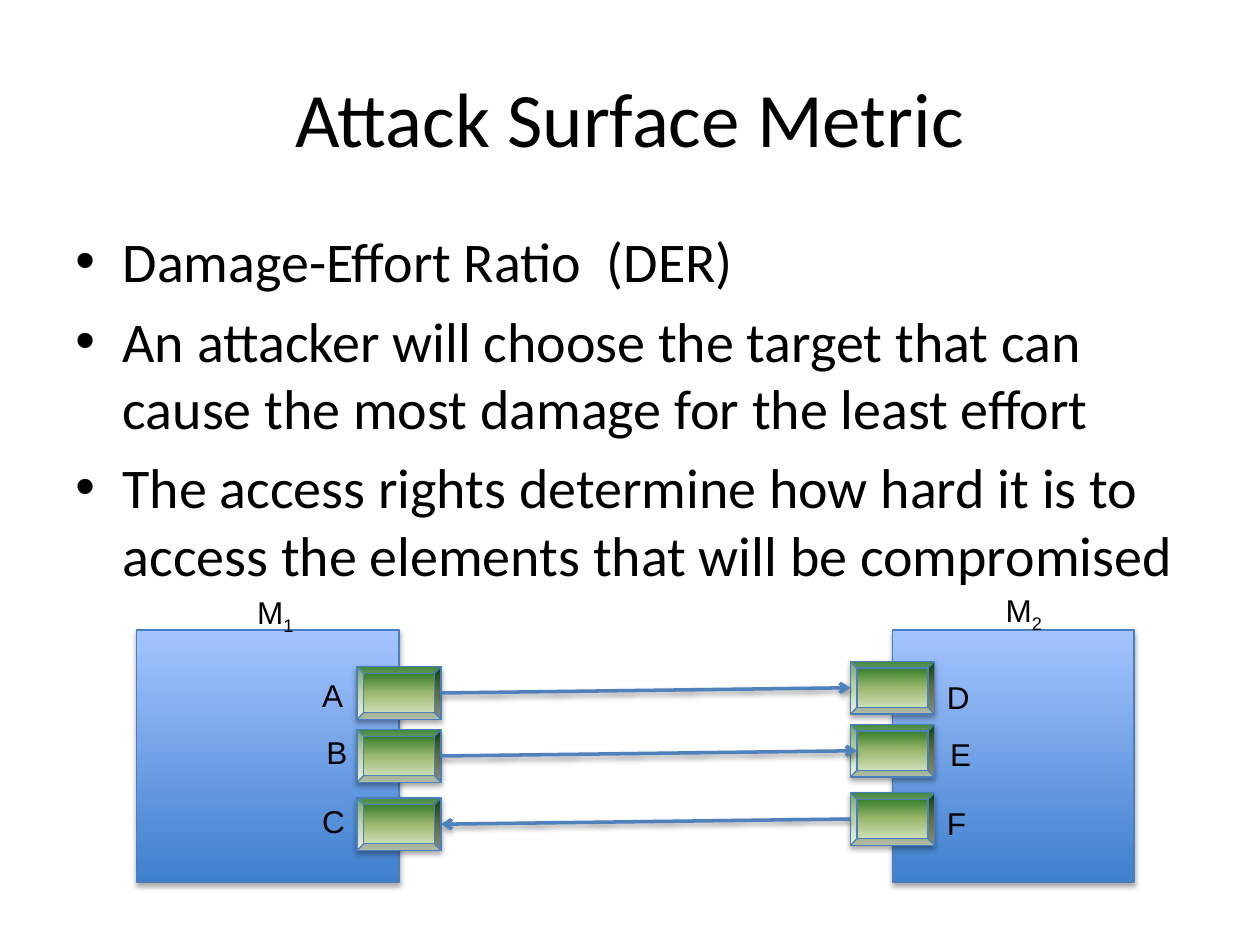
from collections import namedtuple
from dataclasses import dataclass

from lxml.etree import SubElement
from pptx import Presentation
from pptx.dml.color import RGBColor as Color
from pptx.enum.shapes import MSO_CONNECTOR as Line, MSO_SHAPE as Preset
from pptx.enum.text import MSO_ANCHOR as Anchor, MSO_AUTO_SIZE as Fit, PP_ALIGN as Align
from pptx.oxml.ns import qn
from pptx.util import Pt

SCALE = 7620
Box = namedtuple("Box", "left top width height")
Port = namedtuple("Port", "name row label_left label_top")


@dataclass(frozen=True)
class Theme:
    """Colours, fonts and type sizes of the slide."""
    ink: str = "000000"
    outline: str = "4B7EBC"
    arrow: str = "4F81BD"
    module: tuple = ((0, "3F80CE"), (100, "A4C4FF"))
    port: tuple = ((0, "DDEBCF"), (50, "9CB86E"), (100, "156B13"))
    text_font: str = "Calibri"
    label_font: str = "Arial"
    title_size: int = 44
    body_size: int = 32
    label_size: int = 18


THEME = Theme()


def emu(values):
    """Turn px lengths into EMU."""
    return [value * SCALE for value in values]


def add_node(parent, tag, **attributes):
    """Append a drawing element with the given attributes."""
    return SubElement(parent, qn(tag), {key: str(value) for key, value in attributes.items()})


def add_shadow(shape, distance, alpha):
    """Give a shape or connector a soft shadow below it."""
    effects = add_node(shape._element.spPr, "a:effectLst")
    shadow = add_node(effects, "a:outerShdw", blurRad=40000, dist=distance, dir=5400000, rotWithShape=0)
    color = add_node(shadow, "a:srgbClr", val=THEME.ink)
    add_node(color, "a:alpha", val=alpha * 1000)


def add_bullet(para, indent):
    """Hang a round bullet in front of a paragraph."""
    properties = para._p.get_or_add_pPr()
    properties.set("marL", str(indent * SCALE))
    properties.set("indent", str(-indent * SCALE))
    add_node(properties, "a:buFont", typeface="Arial")
    add_node(properties, "a:buChar", char="•")


def add_text(page, box, lines, size, font, align=Align.LEFT, anchor=Anchor.TOP,
             wrap=True, indent=0, gap=0, subscript=""):
    """Place paragraphs of text in a box with one format."""
    shape = page.shapes.add_textbox(*emu(box))
    frame = shape.text_frame
    frame.word_wrap = wrap
    frame.auto_size = Fit.NONE if wrap else Fit.SHAPE_TO_FIT_TEXT
    frame.vertical_anchor = anchor
    for index, line in enumerate(lines):
        para = frame.add_paragraph() if index else frame.paragraphs[0]
        para.alignment = align
        if index and gap:
            para.space_before = Pt(gap)
        if indent:
            add_bullet(para, indent)
        for text in filter(None, (line, subscript)):
            span = para.add_run()
            span.text = text
            span.font.size = Pt(size)
            span.font.name = font
            span.font.color.rgb = Color.from_string(THEME.ink)
        if subscript:
            span.font._element.set("baseline", "-25000")


def add_block(page, preset, box, stops):
    """Draw a shaded, outlined block."""
    shape = page.shapes.add_shape(preset, *emu(box))
    shape.fill.gradient()
    gradient = shape._element.spPr.find(qn("a:gradFill"))
    for child in list(gradient):
        gradient.remove(child)
    stop_list = add_node(gradient, "a:gsLst")
    for position, color in stops:
        stop = add_node(stop_list, "a:gs", pos=position * 1000)
        add_node(stop, "a:srgbClr", val=color)
    add_node(gradient, "a:lin", ang=16200000, scaled=0)
    shape.line.color.rgb = Color.from_string(THEME.outline)
    shape.line.width = Pt(0.75)
    add_shadow(shape, 23000, 35)


def add_arrow(page, start, end):
    """Draw an arrow between two points."""
    arrow = page.shapes.add_connector(Line.STRAIGHT, *emu(start + end))
    arrow.line.color.rgb = Color.from_string(THEME.arrow)
    arrow.line.width = Pt(2)
    add_node(arrow.line._ln, "a:tailEnd", type="arrow")
    add_shadow(arrow, 20000, 38)


def add_label(page, left, top, text, width=45, subscript=""):
    """Write a short diagram label."""
    add_text(page, Box(left, top, width, 48), [text], THEME.label_size, THEME.label_font,
             wrap=False, subscript=subscript)


def add_module(page, box, number, caption, port_left, port_top, ports):
    """Draw a module with its caption, ports and port labels."""
    add_block(page, Preset.RECTANGLE, box, THEME.module)
    caption_left, caption_top = caption
    add_label(page, box.left + caption_left, box.top + caption_top, "M", width=61, subscript=number)
    for port in ports:
        left, top = box.left + port_left, box.top + port_top + port.row
        add_block(page, Preset.BEVEL, Box(left, top, 80, 50), THEME.port)
        add_label(page, left + port.label_left, top + port.label_top, port.name)


def add_diagram(page, box):
    """Draw two modules and the arrows between their ports."""
    rows = (0, 60, 125)
    left_ports = [Port(name, row, *shift) for name, row, shift in
                  zip("ABC", rows, ((-45, 3), (-41, -3), (-45, -2)))]
    right_ports = [Port(name, row, *shift) for name, row, shift in
                   zip("DEF", rows, ((80, 10), (83, 4), (80, 5)))]
    source = Box(box.left, box.top, 250, box.height)
    target = Box(box.left + box.width - 230, box.top, 230, box.height)
    add_module(page, source, "1", (103, -41), 210, 35, left_ports)
    add_module(page, target, "2", (96, -43), -40, 30, right_ports)
    for row, overlap, backward in zip(rows, (0, 6, 0), (False, False, True)):
        start = (source.left + 290, box.top + 60 + row)
        end = (target.left - 40 + overlap, box.top + 55 + row)
        add_arrow(page, *((end, start) if backward else (start, end)))


def add_header(page, box):
    """Write the slide title."""
    add_text(page, box, ["Attack Surface Metric"], THEME.title_size, THEME.text_font,
             align=Align.CENTER, anchor=Anchor.MIDDLE)


def add_body(page, box):
    """Write the bulleted statements."""
    lines = ["Damage-Effort Ratio  (DER)",
             "An attacker will choose the target that can cause the most damage for the least effort",
             "The access rights determine how hard it is to access the elements that will be compromised"]
    add_text(page, box, lines, THEME.body_size, THEME.text_font, indent=45, gap=7)


def main():
    """Build and save the slide."""
    deck = Presentation()
    deck.slide_width, deck.slide_height = emu((1200, 900))
    page = deck.slides.add_slide(deck.slide_layouts[6])
    add_header(page, Box(60, 36, 1080, 150))
    add_body(page, Box(60, 210, 1080, 340))
    add_diagram(page, Box(130, 600, 950, 240))
    deck.save("out.pptx")


if __name__ == "__main__":
    main()
